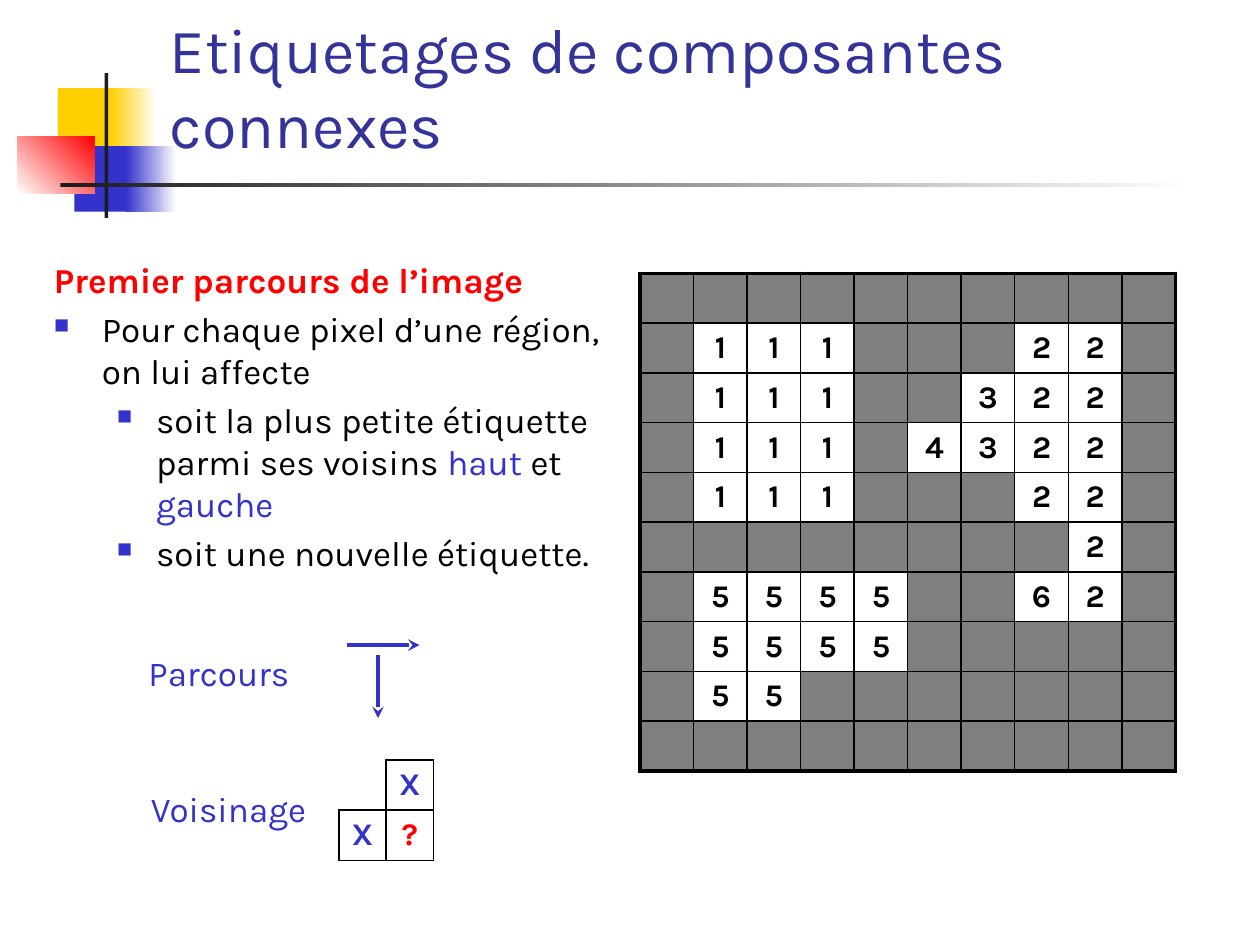
from lxml.etree import SubElement
from pptx import Presentation
from pptx.dml.color import RGBColor as RGB
from pptx.enum.shapes import MSO_CONNECTOR as LINE, MSO_SHAPE as SHAPE
from pptx.enum.text import MSO_ANCHOR as ANCHOR, PP_ALIGN as ALIGN
from pptx.oxml.ns import qn
from pptx.util import Emu, Inches, Pt

FONT = "Karla"
COLORS = {
    "black": "000000", "white": "FFFFFF", "ink": "1C1C1C", "title": "333399",
    "blue": "3333CC", "red": "FF0000", "yellow": "FFCF01",
}

prs = Presentation()
prs.slide_width, prs.slide_height = Inches(10), Inches(7.5)
slide = prs.slides.add_slide(prs.slide_layouts[6])
shapes = slide.shapes

# The slide is a grid of 100 columns by 75 rows
COL, ROW = prs.slide_width / 100, prs.slide_height / 75


def place(left, top, width, height):
    return [Emu(round(n * unit)) for n, unit in
            ((left, COL), (top, ROW), (width, COL), (height, ROW))]


def set_font(paragraph, size, color, bold=False):
    font = paragraph.font
    font.name, font.size, font.bold = FONT, Pt(size), bold
    font.color.rgb = RGB.from_string(COLORS[color])


# Decoration: coloured squares and the crossing bars (start, end, angle)
decoration = [
    ((4.6, 7, 4.8, 5.2), "yellow", None, 0),
    ((8.8, 7, 3.6, 5.2), "yellow", "white", 0),
    ((5.9, 11.6, 4.6, 5.2), "blue", None, 0),
    ((10, 11.6, 4, 5.2), "blue", "white", 0),
    ((1.4, 10.8, 6.1, 4.6), "white", "red", 45),
    ((8.3, 5.8, 0.3, 11.5), "ink", None, 0),
    ((4.8, 14.5, 90, 0.35), "ink", "white", 0),
]
for area, start, end, angle in decoration:
    block = shapes.add_shape(SHAPE.RECTANGLE, *place(*area))
    block.shadow.inherit = False
    block.line.fill.background()
    if end:
        block.fill.gradient()
        block.fill.gradient_angle = angle
        for stop, color in zip(block.fill.gradient_stops, (start, end)):
            stop.color.rgb = RGB.from_string(COLORS[color])
    else:
        block.fill.solid()
        block.fill.fore_color.rgb = RGB.from_string(COLORS[start])

# Texts: area, anchor, size, paragraphs (level, bold, space before, runs);
# level 0 has no indent, level 1 starts with a heading, levels 2 and 3 have bullets
INDENTS = {1: (0.38, -0.38), 2: (0.38, -0.38), 3: (0.81, -0.31)}
texts = [
    ((12.5, 3.3, 87.5, 10), ANCHOR.BOTTOM, 36,
     [(0, False, 0, [("Etiquetages de composantes connexes", "title")])]),
    ((3.3, 20, 45.8, 29.2), ANCHOR.TOP, 20, [
        (1, True, 4, [("Premier parcours de l’image", "red")]),
        (2, False, 4, [("Pour chaque pixel d’une région, on lui affecte", "black")]),
        (3, False, 4, [("soit la plus petite étiquette parmi ses voisins ", "black"),
                       ("haut", "blue"), (" et ", "black"), ("gauche", "blue")]),
        (3, False, 4, [("soit une nouvelle étiquette.", "black")]),
    ]),
    ((10.8, 51.2, 14.2, 4.3), ANCHOR.TOP, 20, [(0, False, 0, [("Parcours", "blue")])]),
    ((11, 62, 15, 4.3), ANCHOR.TOP, 20, [(0, False, 0, [("Voisinage", "blue")])]),
]
for area, anchor, size, paragraphs in texts:
    frame = shapes.add_textbox(*place(*area)).text_frame
    frame.word_wrap = True
    frame.vertical_anchor = anchor
    for i, (level, bold, before, runs) in enumerate(paragraphs):
        paragraph = frame.add_paragraph() if i else frame.paragraphs[0]
        paragraph.space_before = Pt(before)
        paragraph.level = max(level - 2, 0)
        props = paragraph._p.get_or_add_pPr()
        if level:
            margin, indent = INDENTS[level]
            props.set("marL", str(Inches(margin)))
            props.set("indent", str(Inches(indent)))
        if level > 1:
            bullet_color = SubElement(props, qn("a:buClr"))
            SubElement(bullet_color, qn("a:srgbClr"), val=COLORS["blue"])
            SubElement(props, qn("a:buSzPct"), val="60000")
            SubElement(props, qn("a:buChar"), char="■")
        set_font(paragraph, size, runs[0][1], bold)
        for words, color in runs:
            run = paragraph.add_run()
            run.text = words
            if len(runs) > 1:
                run.font.color.rgb = RGB.from_string(COLORS[color])

# Label image and neighbourhood: "." is background, "_" is an open corner
label_rows = [
    "..........",
    ".111...22.",
    ".111..322.",
    ".111.4322.",
    ".111...22.",
    "........2.",
    ".5555..62.",
    ".5555.....",
    ".55.......",
    "..........",
]
mark_colors = {"X": "blue", "?": "red"}
grids = [
    ((50.8, 21.7, 42.5, 39.5), label_rows, 2.25),
    ((26.9, 60.3, 7.5, 8), ["_X", "X?"], 1),
]
for area, rows, frame_width in grids:
    last_row, last_col = len(rows) - 1, len(rows[0]) - 1
    table = shapes.add_table(last_row + 1, last_col + 1, *place(*area)).table
    table.first_row = table.horz_banding = False
    for r, row in enumerate(rows):
        for c, mark in enumerate(row):
            cell = table.cell(r, c)
            cell.vertical_anchor = ANCHOR.MIDDLE
            cell.margin_top = cell.margin_bottom = Inches(0.03)
            props = cell._tc.get_or_add_tcPr()
            edges = {"L": c == 0, "R": c == last_col, "T": r == 0, "B": r == last_row}
            for side, outer in edges.items():
                width = Pt(frame_width if outer else 1)
                border = SubElement(props, qn(f"a:ln{side}"), w=str(width))
                if mark == "_" and outer:
                    SubElement(border, qn("a:noFill"))
                else:
                    ink = SubElement(border, qn("a:solidFill"))
                    SubElement(ink, qn("a:srgbClr"), val=COLORS["black"])
            if mark == ".":
                cell.fill.solid()
                cell.fill.fore_color.rgb = RGB.from_string(COLORS["black"])
                tint = props.find(qn("a:solidFill")).find(qn("a:srgbClr"))
                SubElement(tint, qn("a:alpha"), val="50000")
            else:
                cell.fill.background()
            paragraph = cell.text_frame.paragraphs[0]
            paragraph.alignment = ALIGN.CENTER
            set_font(paragraph, 18, mark_colors.get(mark, "black"), True)
            if mark not in "._":
                paragraph.add_run().text = mark

# Scan directions: rightwards, then downwards
for left, top, width, height in [(27.5, 51.2, 5.8, 0), (30, 52, 0, 5)]:
    x1, y1, x2, y2 = place(left, top, left + width, top + height)
    arrow = shapes.add_connector(LINE.STRAIGHT, x1, y1, x2, y2)
    arrow.line.width = Pt(2.25)
    arrow.line.color.rgb = RGB.from_string(COLORS["blue"])
    SubElement(arrow.line._get_or_add_ln(), qn("a:tailEnd"), type="stealth")
    SubElement(arrow._element.spPr, qn("a:effectLst"))

prs.save("out.pptx")
